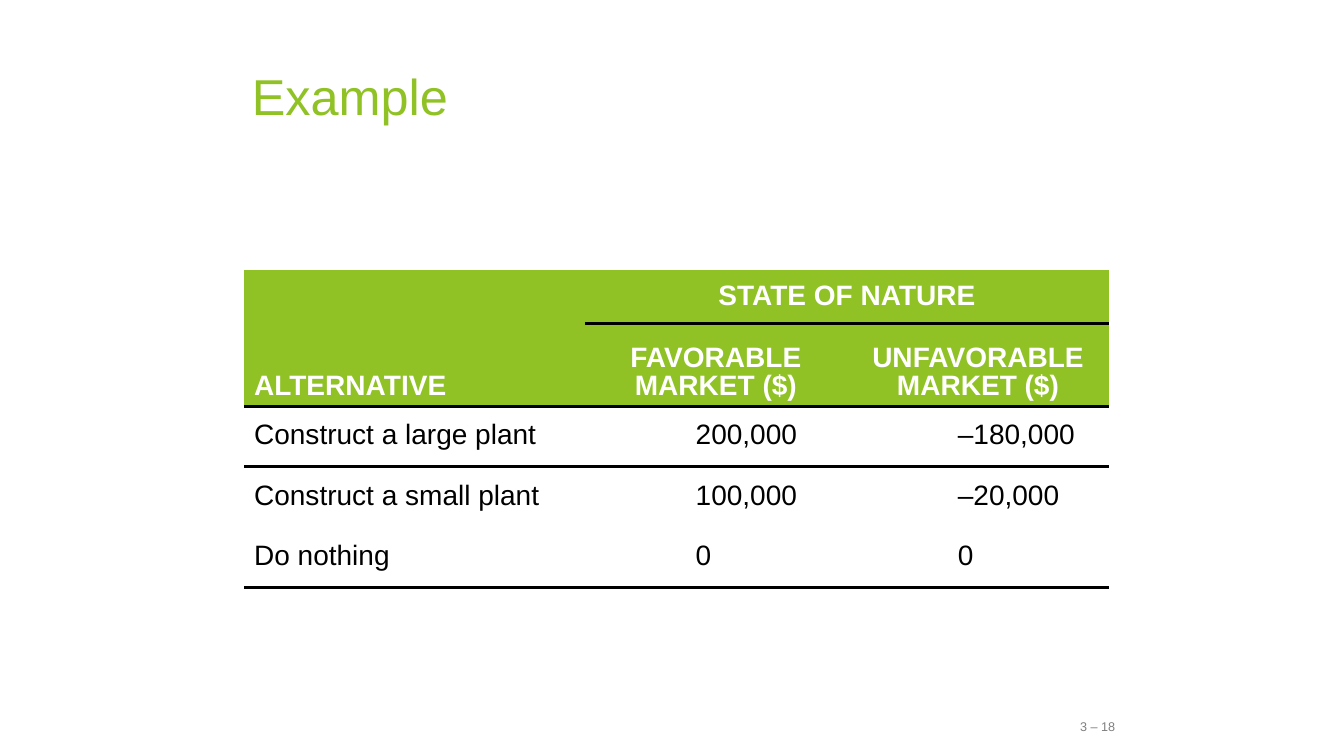
from pptx import Presentation
from pptx.dml.color import RGBColor
from pptx.enum.text import MSO_ANCHOR, PP_ALIGN
from pptx.oxml import parse_xml
from pptx.oxml.ns import nsdecls
from pptx.util import Inches, Pt

GREEN, WHITE, BLACK, GRAY = "90C226", "FFFFFF", "000000", "7F7F7F"


def write(tf, text, size, color, bold=False, align=PP_ALIGN.LEFT):
    tf.word_wrap = True
    p = tf.paragraphs[0]
    p.alignment = align
    r = p.add_run()
    r.text = text
    for name, value in {"name": "Arial", "size": Pt(size), "bold": bold}.items():
        setattr(r.font, name, value)
    r.font.color.rgb = RGBColor.from_string(color)
    return p


def add_border(cell, side):
    cell._tc.get_or_add_tcPr().insert(0, parse_xml(
        f'<a:ln{side} {nsdecls("a")} w="28575"><a:solidFill>'
        f'<a:srgbClr val="{BLACK}"/></a:solidFill></a:ln{side}>'))


prs = Presentation()
prs.slide_width, prs.slide_height = Inches(13.33), Inches(7.5)
s = prs.slides.add_slide(prs.slide_layouts[6])

# Title and page number
for text, box, size, color, align in [
    ("Example", (2.4, 0.57, 8.5, 0.75), 36, GREEN, PP_ALIGN.LEFT),
    ("3 – 18", (8.83, 7.01, 2.33, 0.4), 9, GRAY, PP_ALIGN.RIGHT),
]:
    tf = s.shapes.add_textbox(*map(Inches, box)).text_frame
    tf.vertical_anchor = MSO_ANCHOR.MIDDLE
    write(tf, text, size, color, align=align)

# Payoff table without a banded style
rows = [
    ("", "STATE OF NATURE", ""),
    ("ALTERNATIVE", "FAVORABLE MARKET ($)", "UNFAVORABLE MARKET ($)"),
    ("Construct a large plant", "200,000", "–180,000"),
    ("Construct a small plant", "100,000", "–20,000"),
    ("Do nothing", "0", "0"),
]
table = s.shapes.add_table(5, 3, Inches(2.42), Inches(2.68),
                           Inches(8.58), Inches(3.15)).table
table.first_row = table.horz_banding = False
table._tbl.tblPr[0].text = "{2D5ABB26-0587-4C30-8999-92F81FD0307C}"
for col, width in zip(table.columns, (3.38, 2.6, 2.6)):
    col.width = Inches(width)
for row, height in zip(table.rows, (0.53, 0.82, 0.6, 0.6, 0.6)):
    row.height = Inches(height)
table.cell(0, 1).merge(table.cell(0, 2))

for i, texts in enumerate(rows):
    header = i < 2
    for j, text in enumerate(texts):
        cell = table.cell(i, j)
        cell.vertical_anchor = MSO_ANCHOR.BOTTOM if i == 1 else MSO_ANCHOR.MIDDLE
        if header:
            cell.fill.solid()
            cell.fill.fore_color.rgb = RGBColor.from_string(GREEN)
        else:
            cell.fill.background()
            if j:
                cell.margin_left = Inches(1.1)
        if text:
            p = write(cell.text_frame, text, 20, WHITE if header else BLACK, header,
                      PP_ALIGN.CENTER if header and j else PP_ALIGN.LEFT)
            p.line_spacing, p.space_before = 0.9, Pt(4)
        # Rules under the spanning header, the header and the last row
        if i in (1, 4) or (i == 0 and j):
            add_border(cell, "B")
        if i == 2 or (i == 1 and j):
            add_border(cell, "T")

prs.save("out.pptx")
